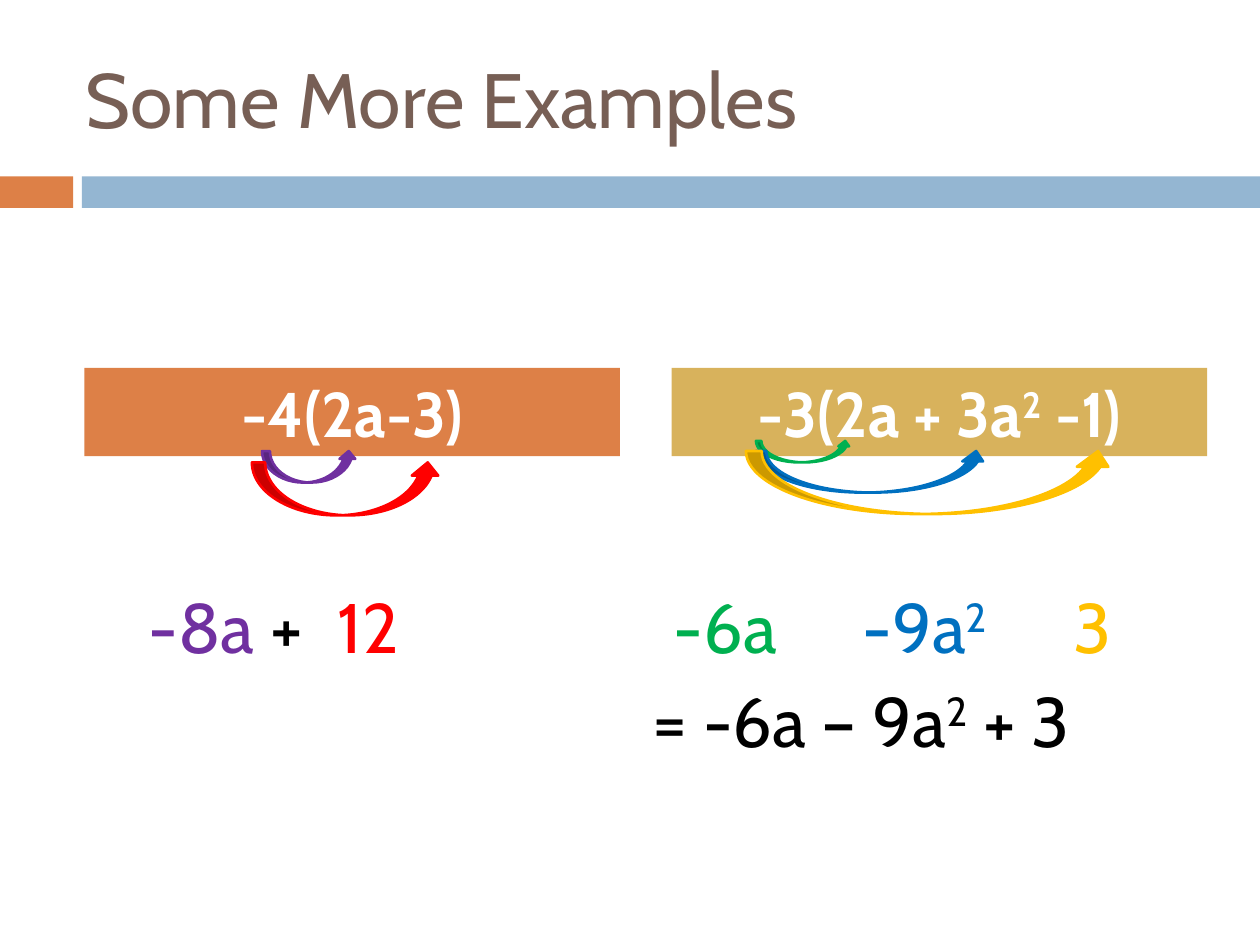
from dataclasses import dataclass

from pptx import Presentation
from pptx.dml.color import RGBColor
from pptx.enum.shapes import MSO_SHAPE
from pptx.enum.text import MSO_ANCHOR, PP_ALIGN
from pptx.util import Inches, Pt

RECTANGLE = MSO_SHAPE.RECTANGLE
CURVED_ARROW = MSO_SHAPE.CURVED_UP_ARROW
MIDDLE = MSO_ANCHOR.MIDDLE
LEFT, CENTER = PP_ALIGN.LEFT, PP_ALIGN.CENTER

FONT = "Cabin"
BROWN = RGBColor(0x77, 0x5F, 0x55)
ORANGE = RGBColor(0xDD, 0x80, 0x47)
LIGHT_BLUE = RGBColor(0x94, 0xB6, 0xD2)
GOLD = RGBColor(0xD8, 0xB2, 0x5C)
WHITE = RGBColor(0xFF, 0xFF, 0xFF)
BLACK = RGBColor(0x00, 0x00, 0x00)
PURPLE = RGBColor(0x70, 0x30, 0xA0)
RED = RGBColor(0xFF, 0x00, 0x00)
GREEN = RGBColor(0x00, 0xB0, 0x50)
BLUE = RGBColor(0x00, 0x70, 0xC0)
YELLOW = RGBColor(0xFF, 0xC0, 0x00)


@dataclass(frozen=True)
class Box:
    left: float
    top: float
    width: float
    height: float

    def lengths(self):
        return [Inches(n) for n in (self.left, self.top, self.width, self.height)]


@dataclass(frozen=True)
class Piece:
    text: str
    color: RGBColor
    superscript: bool = False


@dataclass(frozen=True)
class Header:
    box: Box
    fill: RGBColor
    pieces: tuple[Piece, ...]


@dataclass(frozen=True)
class Arrow:
    box: Box
    color: RGBColor


@dataclass(frozen=True)
class Term:
    box: Box
    pieces: tuple[Piece, ...]
    wrap: bool = False


BARS = (
    (Box(0, 1.4, 0.58, 0.25), ORANGE),
    (Box(0.65, 1.4, 9.35, 0.25), LIGHT_BLUE),
)
HEADERS = (
    Header(Box(0.67, 2.92, 4.25, 0.7), ORANGE, (Piece("-4(2a-3)", WHITE),)),
    Header(Box(5.33, 2.92, 4.25, 0.7), GOLD, (
        Piece("-3(2a + 3a", WHITE), Piece("2", WHITE, True), Piece(" -1)", WHITE))),
)
ARROWS = (
    Arrow(Box(2.08, 3.58, 0.75, 0.25), PURPLE),
    Arrow(Box(2, 3.67, 1.5, 0.42), RED),
    Arrow(Box(6, 3.5, 0.75, 0.17), GREEN),
    Arrow(Box(6, 3.58, 1.83, 0.33), BLUE),
    Arrow(Box(5.92, 3.58, 2.92, 0.5), YELLOW),
)
TERMS = (
    Term(Box(1.08, 4.58, 1.58, 0.77), (Piece("-8a ", PURPLE), Piece("+", BLACK)), True),
    Term(Box(2.58, 4.58, 0.82, 0.77), (Piece("12", RED),)),
    Term(Box(5.25, 4.58, 1.16, 0.77), (Piece("-6a", GREEN),)),
    Term(Box(6.75, 4.58, 1.37, 0.77), (Piece("-9a", BLUE), Piece("2", BLUE, True))),
    Term(Box(8.42, 4.58, 0.51, 0.77), (Piece("3", YELLOW),)),
    Term(Box(5.08, 5.33, 4.05, 0.77), (
        Piece("= -6a – 9a", BLACK), Piece("2", BLACK, True), Piece(" + 3", BLACK))),
)


def add_pieces(paragraph, pieces: tuple[Piece, ...], size: int, bold: bool = False) -> None:
    for piece in pieces:
        run = paragraph.add_run()
        run.text = piece.text
        run.font.name = FONT
        run.font.size = Pt(size)
        run.font.bold = bold
        run.font.color.rgb = piece.color
        if piece.superscript:
            run.font._element.set("baseline", "30000")


def add_filled_shape(slide, kind: MSO_SHAPE, box: Box, color: RGBColor):
    shape = slide.shapes.add_shape(kind, *box.lengths())
    shape.shadow.inherit = False
    shape.fill.solid()
    shape.fill.fore_color.rgb = color
    shape.line.fill.background()
    return shape


def add_title(slide, text: str, box: Box) -> None:
    title = slide.shapes.title
    title.left, title.top, title.width, title.height = box.lengths()
    title.text_frame.vertical_anchor = MIDDLE
    paragraph = title.text_frame.paragraphs[0]
    paragraph.alignment = LEFT
    add_pieces(paragraph, (Piece(text, BROWN),), 44)


def add_header(slide, header: Header) -> None:
    shape = add_filled_shape(slide, RECTANGLE, header.box, header.fill)
    shape.text_frame.vertical_anchor = MIDDLE
    paragraph = shape.text_frame.paragraphs[0]
    paragraph.alignment = CENTER
    paragraph.space_before = Pt(7)
    add_pieces(paragraph, header.pieces, 36, bold=True)


def add_arrow(slide, arrow: Arrow) -> None:
    shape = add_filled_shape(slide, CURVED_ARROW, arrow.box, arrow.color)
    shape.line.color.rgb = arrow.color
    shape.line.width = Pt(1.5)


def add_term(slide, term: Term) -> None:
    text_box = slide.shapes.add_textbox(*term.box.lengths())
    text_box.text_frame.word_wrap = term.wrap
    add_pieces(text_box.text_frame.paragraphs[0], term.pieces, 40)


def main() -> None:
    presentation = Presentation()
    presentation.slide_width = Inches(10)
    presentation.slide_height = Inches(7.5)
    slide = presentation.slides.add_slide(presentation.slide_layouts[5])

    for box, color in BARS:
        add_filled_shape(slide, RECTANGLE, box, color)
    add_title(slide, "Some More Examples", Box(0.58, 0.3, 8.92, 0.95))
    for header in HEADERS:
        add_header(slide, header)
    for arrow in ARROWS:
        add_arrow(slide, arrow)
    for term in TERMS:
        add_term(slide, term)

    presentation.save("out.pptx")


if __name__ == "__main__":
    main()
